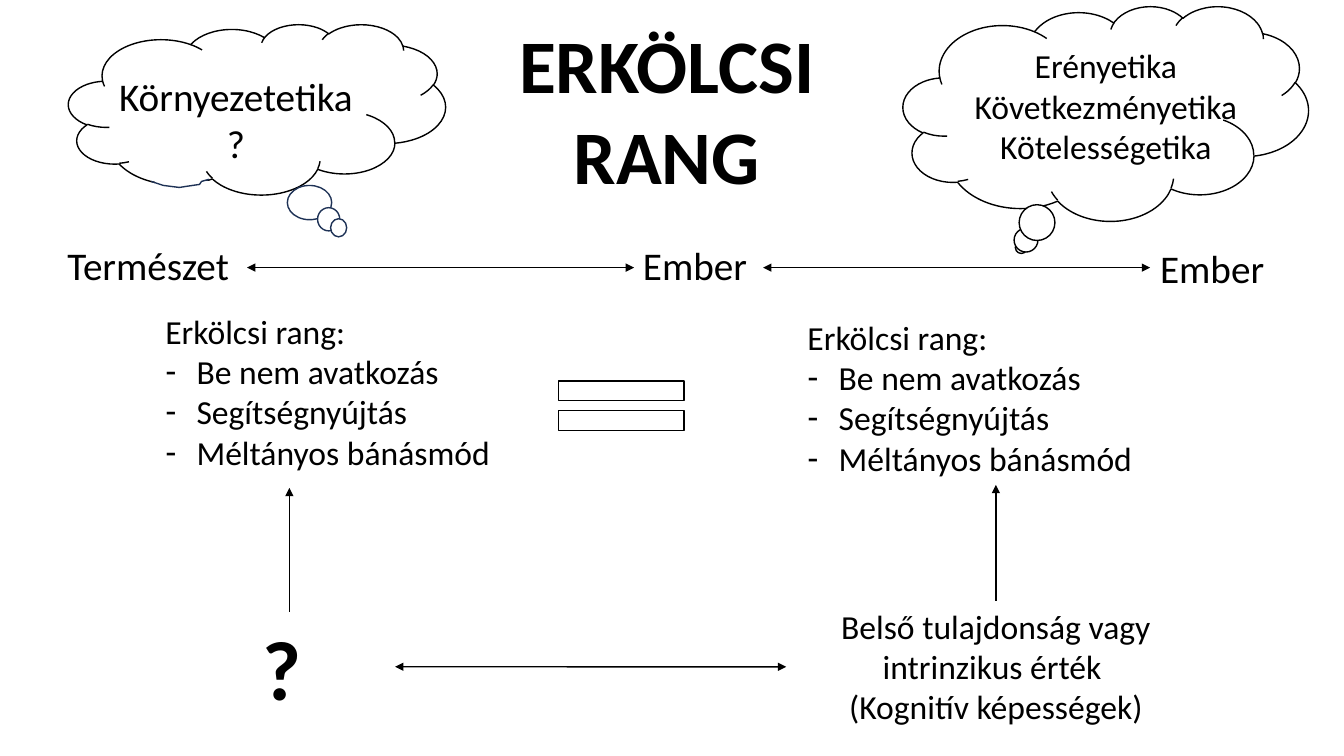
from typing import NamedTuple, Optional

from lxml.etree import SubElement
from pptx import Presentation
from pptx.dml.color import RGBColor
from pptx.enum.shapes import MSO_CONNECTOR, MSO_SHAPE
from pptx.enum.text import MSO_AUTO_SIZE, PP_ALIGN
from pptx.oxml.ns import qn
from pptx.util import Inches, Pt

COLORS = {"text": "000000", "line": "000000", "paper": "FFFFFF", "bubble": "1E3256"}
FONT = "Calibri"
SLIDE_WIDTH, SLIDE_HEIGHT = Inches(13.333), Inches(7.5)
AXIS = 35.4
LIST_INDENT = Inches(0.31)
RANK_LINES = ["Erkölcsi rang:", "Be nem avatkozás", "Segítségnyújtás", "Méltányos bánásmód"]


class Box(NamedTuple):
    """A rectangle in percent of the slide's width and height."""
    left: float
    top: float
    width: float
    height: float


class Label(NamedTuple):
    box: Box
    lines: list
    size: int
    align: PP_ALIGN = PP_ALIGN.LEFT
    bold: bool = False


class Figure(NamedTuple):
    kind: MSO_SHAPE
    box: Box
    line: str = "line"


class Arrow(NamedTuple):
    start: tuple
    end: tuple
    two_way: bool = True
    start_joint: Optional[tuple] = None
    end_joint: Optional[tuple] = None


TITLE = Label(Box(33.23, 1.6, 32.78, 25.6), ["ERKÖLCSI RANG"], 54, PP_ALIGN.CENTER, True)
RANK_LISTS = [
    Label(Box(11.55, 40.4, 34.65, 22.93), RANK_LINES, 24),
    Label(Box(59.33, 41.2, 34.65, 22.93), RANK_LINES, 24),
]
FIGURES = [
    Figure(MSO_SHAPE.CLOUD_CALLOUT, Box(67.2, 0.8, 30.15, 28.4)),
    Figure(MSO_SHAPE.MATH_EQUAL, Box(39.9, 48.13, 12.68, 11.07)),
    Figure(MSO_SHAPE.CLOUD_CALLOUT, Box(5.1, 3.2, 28.05, 22.53)),
    Figure(MSO_SHAPE.RECTANGLE, Box(11.55, 24, 4.13, 7.6), "paper"),
    Figure(MSO_SHAPE.OVAL, Box(21.38, 24.53, 3.3, 4.53), "bubble"),
    Figure(MSO_SHAPE.OVAL, Box(23.63, 27.47, 1.65, 3.07), "bubble"),
    Figure(MSO_SHAPE.OVAL, Box(24.6, 28.93, 1.2, 2.4), "bubble"),
]
CLOUD_EDGE = [(11.25, 24), (12.15, 24.53), (13.35, 24.8), (13.8, 24.67),
              (14.85, 24.4), (15, 24), (15.53, 23.73), (15.38, 23.87)]
LABELS = {
    "nature": Label(Box(4.28, 31.33, 14.55, 7.6), ["Természet"], 28),
    "human": Label(Box(47.1, 31.33, 10.13, 7.6), ["Ember"], 28),
    "other human": Label(Box(85.58, 31.6, 10.13, 7.6), ["Ember"], 28),
    "theories": Label(Box(68.48, 5.33, 27.6, 17.47),
                      ["Erényetika", "Következményetika", "Kötelességetika"], 24, PP_ALIGN.CENTER),
    "environment": Label(Box(7.58, 8.93, 19.95, 13.87), ["Környezetetika?"], 28, PP_ALIGN.CENTER),
    "value": Label(Box(58.5, 79.47, 31.2, 17.47),
                   ["Belső tulajdonság vagy intrinzikus érték ", "(Kognitív képességek)"],
                   24, PP_ALIGN.CENTER),
    "question": Label(Box(18.83, 80.93, 5.4, 14.8), ["?"], 60, bold=True),
}
ARROWS = [
    Arrow((18.38, AXIS), (47.18, AXIS)),
    Arrow((56.78, AXIS), (85.58, AXIS), end_joint=("other human", 1)),
    Arrow((29.4, 88.2), (58.5, 88.2), end_joint=("value", 1)),
    Arrow((74.1, 79.47), (74.1, 64.13), False, start_joint=("value", 0)),
    Arrow((21.53, 80.93), (21.53, 64.53), False, start_joint=("question", 0)),
]


def place(x: float, y: float) -> tuple:
    """Turn percentages of the slide into lengths."""
    return round(SLIDE_WIDTH * x / 100), round(SLIDE_HEIGHT * y / 100)


def frame(box: Box) -> tuple:
    return place(box.left, box.top) + place(box.width, box.height)


def color(name: str) -> RGBColor:
    return RGBColor.from_string(COLORS[name])


def write(shape, label: Label) -> None:
    """Move a text shape to its box and fill it with formatted lines."""
    shape.left, shape.top, shape.width, shape.height = frame(label.box)
    text_frame = shape.text_frame
    text_frame.text = "\n".join(label.lines)
    text_frame.word_wrap = True
    text_frame.auto_size = MSO_AUTO_SIZE.NONE
    for paragraph in text_frame.paragraphs:
        paragraph.alignment = label.align
        for run in paragraph.runs:
            run.font.name = FONT
            run.font.size = Pt(label.size)
            run.font.bold = label.bold
            run.font.color.rgb = color("text")


def write_list(shape, label: Label) -> None:
    """Write a heading line followed by dashed items."""
    write(shape, label)
    for index, paragraph in enumerate(shape.text_frame.paragraphs):
        properties = paragraph._p.get_or_add_pPr()
        indent = LIST_INDENT if index else 0
        properties.set("marL", str(indent))
        properties.set("indent", str(-indent))
        if index:
            SubElement(properties, qn("a:buFontTx"))
            SubElement(properties, qn("a:buChar"), char="-")
        else:
            SubElement(properties, qn("a:buNone"))
        paragraph.space_before = Pt(0)


def outline(shape, line: str) -> None:
    shape.shadow.inherit = False
    shape.line.color.rgb = color(line)
    shape.line.width = Pt(1)


def draw_figure(slide, figure: Figure) -> None:
    shape = slide.shapes.add_shape(figure.kind, *frame(figure.box))
    shape.fill.solid()
    shape.fill.fore_color.rgb = color("paper")
    outline(shape, figure.line)


def draw_cloud_edge(slide) -> None:
    points = [place(x, y) for x, y in CLOUD_EDGE]
    builder = slide.shapes.build_freeform(*points[0])
    builder.add_line_segments(points[1:], close=False)
    shape = builder.convert_to_shape()
    shape.fill.background()
    outline(shape, "bubble")


def draw_arrow(slide, arrow: Arrow, boxes: dict) -> None:
    connector = slide.shapes.add_connector(
        MSO_CONNECTOR.STRAIGHT, *place(*arrow.start), *place(*arrow.end))
    if arrow.start_joint:
        name, side = arrow.start_joint
        connector.begin_connect(boxes[name], side)
    if arrow.end_joint:
        name, side = arrow.end_joint
        connector.end_connect(boxes[name], side)
    connector.line.color.rgb = color("line")
    connector.line.width = Pt(1)
    line = connector.line._get_or_add_ln()
    for tag in ("a:headEnd", "a:tailEnd") if arrow.two_way else ("a:tailEnd",):
        SubElement(line, qn(tag), type="triangle")
    SubElement(connector._element.spPr, qn("a:effectLst"))


def main() -> None:
    presentation = Presentation()
    presentation.slide_width, presentation.slide_height = SLIDE_WIDTH, SLIDE_HEIGHT
    two_content = presentation.slide_layouts[3]
    slide = presentation.slides.add_slide(two_content)
    write(slide.shapes.title, TITLE)
    for position, rank_list in enumerate(RANK_LISTS, start=1):
        write_list(slide.placeholders[position], rank_list)
    for figure in FIGURES:
        draw_figure(slide, figure)
    draw_cloud_edge(slide)
    boxes = {}
    for name, label in LABELS.items():
        boxes[name] = slide.shapes.add_textbox(*frame(label.box))
        write(boxes[name], label)
    for arrow in ARROWS:
        draw_arrow(slide, arrow, boxes)
    presentation.save("out.pptx")


if __name__ == "__main__":
    main()
